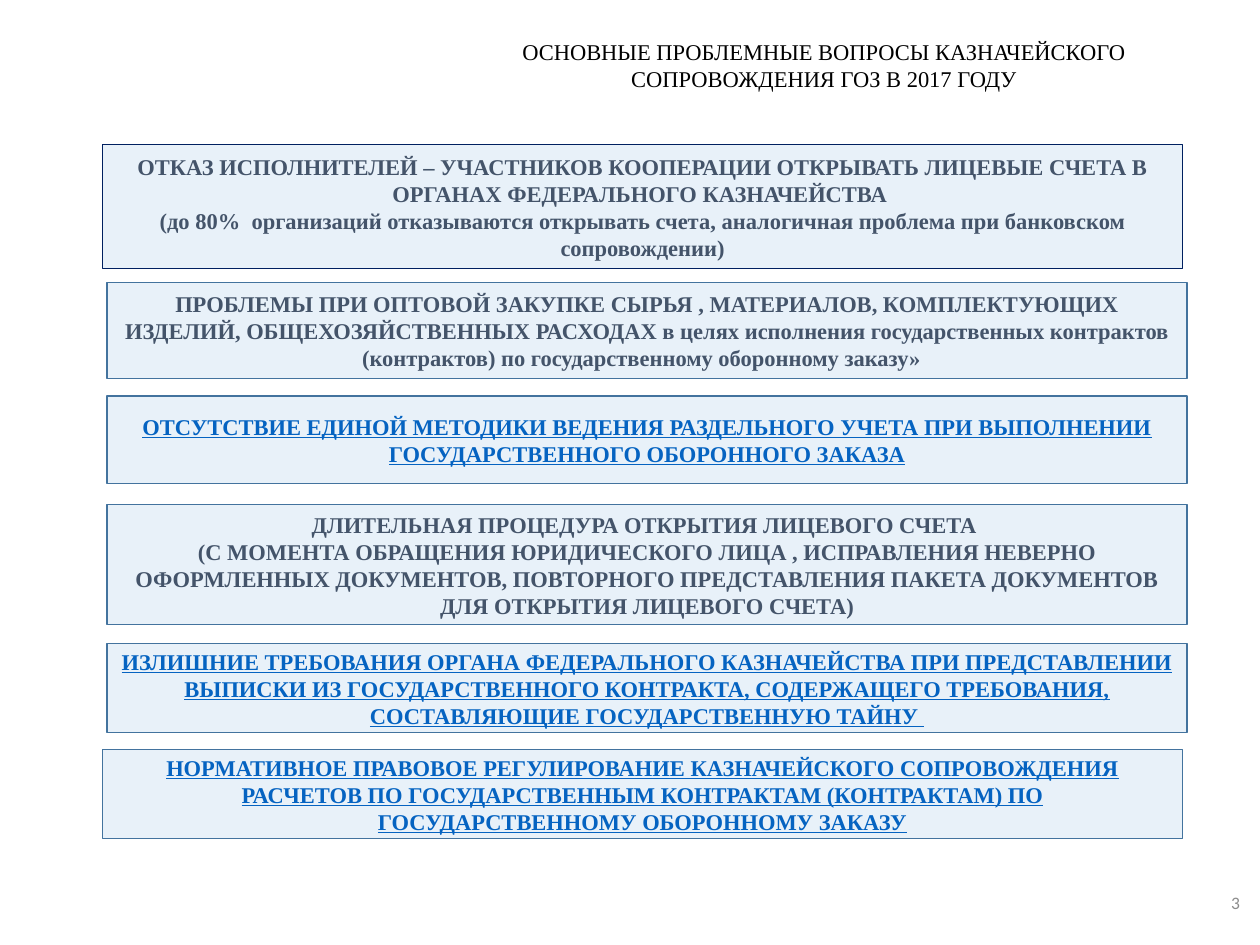
"""Build the slide on problem issues of treasury support for defence orders."""
from lxml.etree import SubElement
from pptx import Presentation
from pptx.dml.color import RGBColor
from pptx.enum.shapes import MSO_SHAPE
from pptx.enum.text import MSO_ANCHOR, PP_ALIGN
from pptx.oxml.ns import qn
from pptx.util import Pt

PX = 9144
BLACK = RGBColor(0x00, 0x00, 0x00)
GREY = RGBColor(0x8C, 0x8C, 0x8C)
SLATE = RGBColor(0x44, 0x54, 0x6A)
LINK_BLUE = RGBColor(0x05, 0x63, 0xC1)
PALE_BLUE = RGBColor(0xDE, 0xEB, 0xF7)
STEEL = RGBColor(0x43, 0x73, 0x9E)
NAVY = RGBColor(0x00, 0x20, 0x60)
SERIF = "Times New Roman"
PANEL_WIDTH = 1200
OPACITY = 69000


def write(frame, text, size, font, color, align, bold=False, underline=False):
    frame.word_wrap = True
    frame.text = text
    for para in frame.paragraphs:
        para.alignment = align
        for span in para.runs:
            span.font.size = Pt(size)
            span.font.name = font
            span.font.color.rgb = color
            span.font.bold = bold
            span.font.underline = underline


deck = Presentation()
deck.slide_width = 1400 * PX
deck.slide_height = 1050 * PX
page = deck.slides.add_slide(deck.slide_layouts[6])

title = page.shapes.add_textbox(517 * PX, 37 * PX, 797 * PX, 71 * PX)
write(title.text_frame,
      "ОСНОВНЫЕ ПРОБЛЕМНЫЕ ВОПРОСЫ КАЗНАЧЕЙСКОГО СОПРОВОЖДЕНИЯ ГОЗ В 2017 ГОДУ",
      18, SERIF, BLACK, PP_ALIGN.CENTER)

issues = [
    (114, 161, 137, NAVY, False,
     "ОТКАЗ ИСПОЛНИТЕЛЕЙ – УЧАСТНИКОВ КООПЕРАЦИИ ОТКРЫВАТЬ ЛИЦЕВЫЕ СЧЕТА В "
     "ОРГАНАХ ФЕДЕРАЛЬНОГО КАЗНАЧЕЙСТВА \n"
     "(до 80%  организаций отказываются открывать счета, аналогичная проблема "
     "при банковском сопровождении)"),
    (119, 314, 107, STEEL, False,
     "ПРОБЛЕМЫ ПРИ ОПТОВОЙ ЗАКУПКЕ СЫРЬЯ , МАТЕРИАЛОВ, КОМПЛЕКТУЮЩИХ ИЗДЕЛИЙ, "
     "ОБЩЕХОЗЯЙСТВЕННЫХ РАСХОДАХ в целях исполнения государственных контрактов "
     "(контрактов) по государственному оборонному заказу»  "),
    (119, 440, 97, STEEL, True,
     "ОТСУТСТВИЕ ЕДИНОЙ МЕТОДИКИ ВЕДЕНИЯ РАЗДЕЛЬНОГО УЧЕТА ПРИ ВЫПОЛНЕНИИ "
     "ГОСУДАРСТВЕННОГО ОБОРОННОГО ЗАКАЗА"),
    (119, 561, 133, STEEL, False,
     "ДЛИТЕЛЬНАЯ ПРОЦЕДУРА ОТКРЫТИЯ ЛИЦЕВОГО СЧЕТА \n"
     "(С МОМЕНТА ОБРАЩЕНИЯ ЮРИДИЧЕСКОГО ЛИЦА , ИСПРАВЛЕНИЯ НЕВЕРНО ОФОРМЛЕННЫХ "
     "ДОКУМЕНТОВ, ПОВТОРНОГО ПРЕДСТАВЛЕНИЯ ПАКЕТА ДОКУМЕНТОВ ДЛЯ ОТКРЫТИЯ "
     "ЛИЦЕВОГО СЧЕТА)"),
    (119, 715, 99, STEEL, True,
     "ИЗЛИШНИЕ ТРЕБОВАНИЯ ОРГАНА ФЕДЕРАЛЬНОГО КАЗНАЧЕЙСТВА ПРИ ПРЕДСТАВЛЕНИИ "
     "ВЫПИСКИ ИЗ ГОСУДАРСТВЕННОГО КОНТРАКТА, СОДЕРЖАЩЕГО ТРЕБОВАНИЯ, "
     "СОСТАВЛЯЮЩИЕ ГОСУДАРСТВЕННУЮ ТАЙНУ "),
    (114, 833, 99, STEEL, True,
     "НОРМАТИВНОЕ ПРАВОВОЕ РЕГУЛИРОВАНИЕ КАЗНАЧЕЙСКОГО СОПРОВОЖДЕНИЯ РАСЧЕТОВ "
     "ПО ГОСУДАРСТВЕННЫМ КОНТРАКТАМ (КОНТРАКТАМ) ПО ГОСУДАРСТВЕННОМУ "
     "ОБОРОННОМУ ЗАКАЗУ"),
]
for left, top, height, outline, linked, text in issues:
    panel = page.shapes.add_shape(MSO_SHAPE.RECTANGLE, left * PX, top * PX,
                                  PANEL_WIDTH * PX, height * PX)
    panel.shadow.inherit = False
    panel.fill.solid()
    panel.fill.fore_color.rgb = PALE_BLUE
    fill_color = panel.fill._xPr.find(qn("a:solidFill")).find(qn("a:srgbClr"))
    SubElement(fill_color, qn("a:alpha")).set("val", str(OPACITY))
    panel.line.color.rgb = outline
    panel.line.width = Pt(1)
    panel.text_frame.vertical_anchor = MSO_ANCHOR.MIDDLE
    write(panel.text_frame, text, 18, SERIF, LINK_BLUE if linked else SLATE,
          PP_ALIGN.CENTER, bold=True, underline=linked)

number = page.shapes.add_textbox(1356 * PX, 975 * PX, 32 * PX, 56 * PX)
frame = number.text_frame
frame.margin_left = frame.margin_right = 12 * PX
frame.margin_top = frame.margin_bottom = 6 * PX
frame.vertical_anchor = MSO_ANCHOR.MIDDLE
write(frame, "3", 14, "Calibri", GREY, PP_ALIGN.RIGHT)

deck.save("out.pptx")
